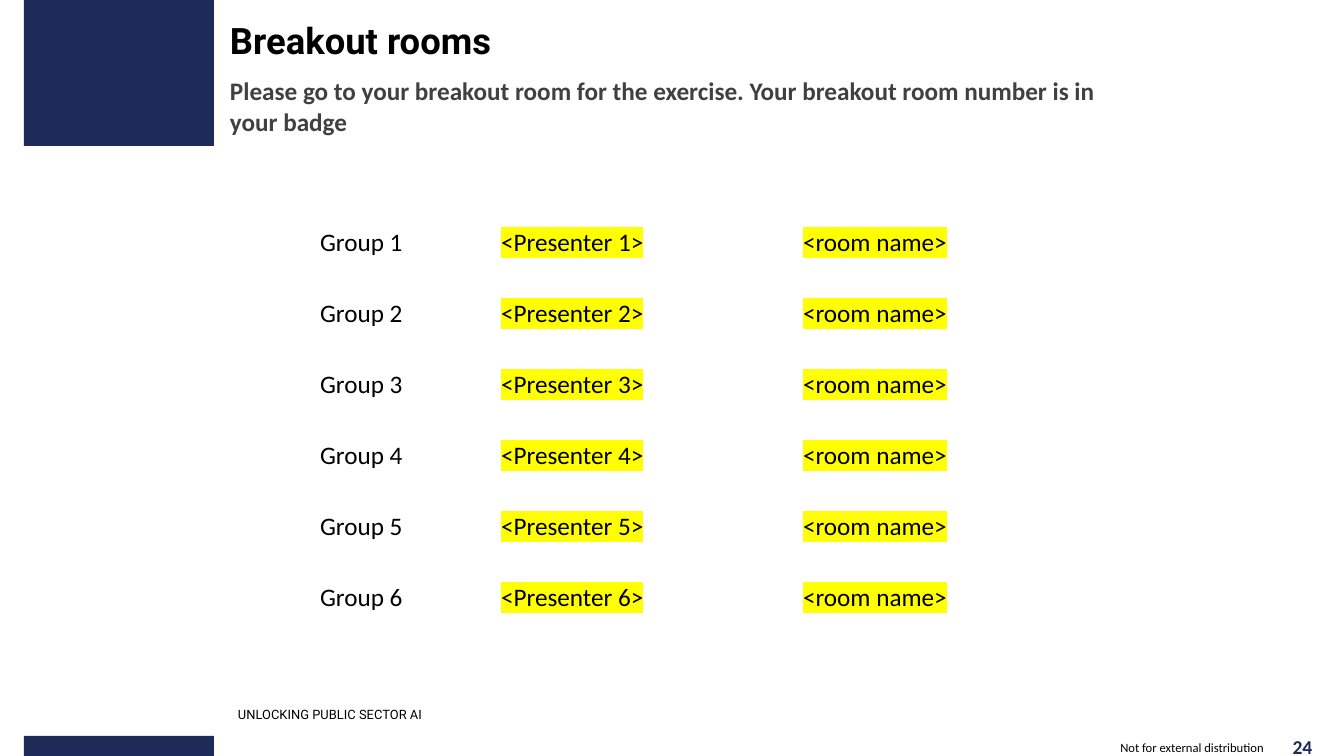
from lxml.etree import SubElement
from pptx import Presentation
from pptx.dml.color import RGBColor
from pptx.enum.shapes import MSO_SHAPE as Shape
from pptx.enum.text import MSO_ANCHOR as Anchor, PP_ALIGN as Align
from pptx.oxml.ns import qn
from pptx.util import Emu, Pt

NAVY = RGBColor(0x1E, 0x2B, 0x58)
BLACK = RGBColor(0, 0, 0)
GRAY = RGBColor(0x40, 0x40, 0x40)
WHITE = RGBColor(255, 255, 255)
YELLOW = RGBColor(255, 255, 0)

TITLE = "Breakout rooms"
SUBTITLE = ("Please go to your breakout room for the exercise. "
            "Your breakout room number is in your badge")
FOOTER = "UNLOCKING PUBLIC SECTOR AI"
NOTICE = "Not for external distribution"
PAGE_NUMBER = "24"
GROUPS = [(f"Group {n}", f"<Presenter {n}>", "<room name>") for n in range(1, 7)]

BANDS = [(24, 0, 190, 146), (24, 736, 190, 20)]
TABLE_LEFT, TABLE_TOP, ROW_HEIGHT = 310, 222, 71
COLUMN_WIDTHS = [181, 302, 302]


def px(value):
    return Emu(round(value * 914400 / 100.8))


def style(para, size, color, name="Calibri", bold=False):
    font = para.font
    font.size, font.name, font.bold = Pt(size), name, bold
    font.color.rgb = color


def add_box(page, area, text, insets=(10, 5, 10, 5), anchor=Anchor.TOP, align=Align.LEFT):
    frame = page.shapes.add_textbox(*map(px, area)).text_frame
    frame.word_wrap = True
    frame.vertical_anchor = anchor
    (frame.margin_left, frame.margin_top,
     frame.margin_right, frame.margin_bottom) = map(px, insets)
    para = frame.paragraphs[0]
    para.text = text
    para.alignment = align
    return frame


def highlight(span):
    mark = SubElement(span.font._element, qn("a:highlight"))
    SubElement(mark, qn("a:srgbClr"), val=str(YELLOW))


def add_borders(cell):
    properties = cell._tc.get_or_add_tcPr()
    for side in ("lnL", "lnR", "lnT", "lnB"):
        line = SubElement(properties, qn(f"a:{side}"), w=str(Pt(1)))
        fill = SubElement(line, qn("a:solidFill"))
        SubElement(fill, qn("a:srgbClr"), val=str(WHITE))


def add_groups(page):
    table = page.shapes.add_table(
        len(GROUPS), len(COLUMN_WIDTHS), px(TABLE_LEFT), px(TABLE_TOP),
        px(sum(COLUMN_WIDTHS)), px(ROW_HEIGHT * len(GROUPS))).table
    table.first_row = table.horz_banding = False
    for column, width in zip(table.columns, COLUMN_WIDTHS):
        column.width = px(width)
    for row, texts in enumerate(GROUPS):
        table.rows[row].height = px(ROW_HEIGHT)
        for column, text in enumerate(texts):
            cell = table.cell(row, column)
            add_borders(cell)
            cell.fill.background()
            para = cell.text_frame.paragraphs[0]
            para.text = text
            style(para, 18, BLACK)
            if column > 0:
                highlight(para.runs[0])


def main():
    deck = Presentation()
    deck.slide_width, deck.slide_height = px(1344), px(756)
    page = deck.slides.add_slide(deck.slide_layouts[6])

    for area in BANDS:
        band = page.shapes.add_shape(Shape.RECTANGLE, *map(px, area))
        band.shadow.inherit = False
        band.fill.solid()
        band.fill.fore_color.rgb = NAVY
        band.line.fill.background()

    heading = add_box(page, (230, 18, 876, 93), TITLE, (0, 0, 10, 0))
    style(heading.paragraphs[0], 26, BLACK, "Roboto", True)
    subtitle = heading.add_paragraph()
    subtitle.text = SUBTITLE
    subtitle.space_before = Pt(10)
    style(subtitle, 18, GRAY, bold=True)

    footer = add_box(page, (228, 705, 276, 22), FOOTER).paragraphs[0]
    footer.line_spacing = 0.8
    style(footer, 9.2, BLACK, "Roboto")

    number = add_box(page, (1287, 732, 31, 30), PAGE_NUMBER, (0, 0, 0, 0),
                     Anchor.MIDDLE, Align.CENTER)
    style(number.paragraphs[0], 14, NAVY, bold=True)
    notice = add_box(page, (1107, 740, 170, 14), NOTICE,
                     anchor=Anchor.MIDDLE, align=Align.CENTER)
    style(notice.paragraphs[0], 9, BLACK)

    add_groups(page)
    deck.save("out.pptx")


if __name__ == "__main__":
    main()
